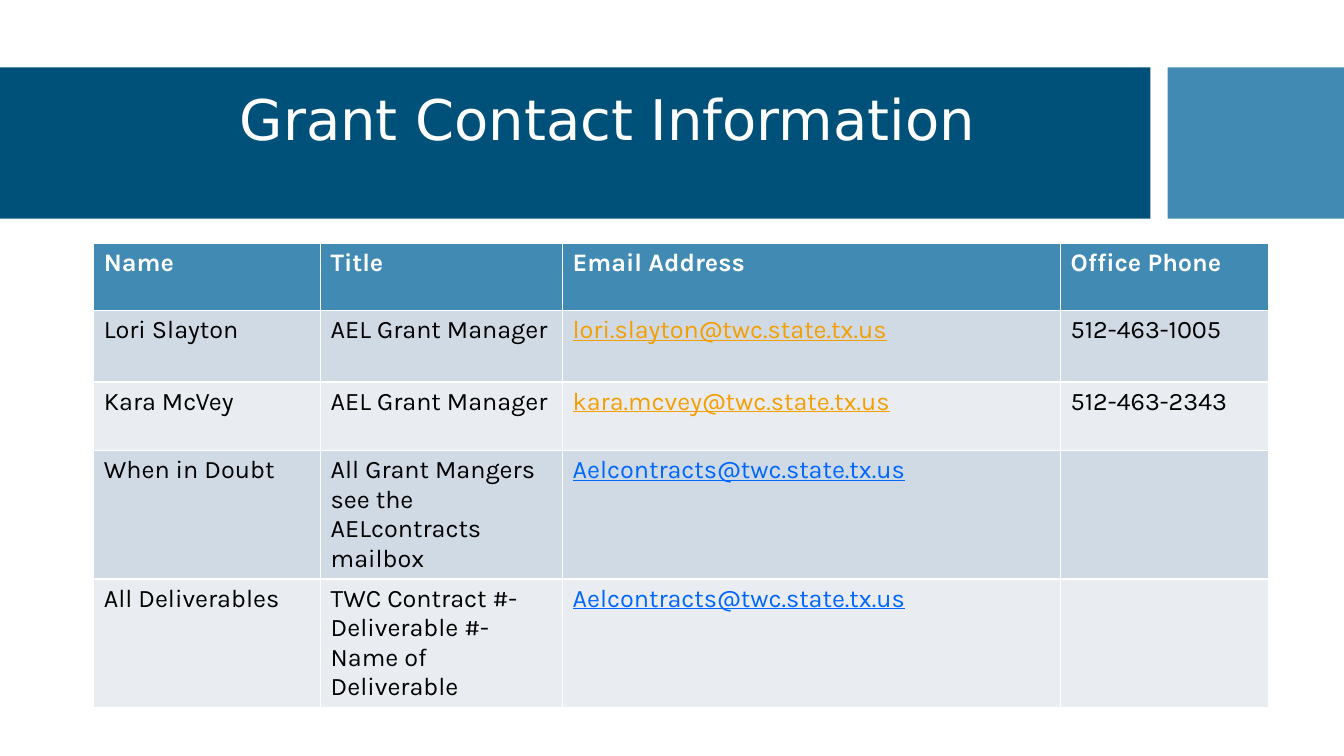
from dataclasses import dataclass

import pptx
import pptx.dml.color
import pptx.enum.shapes
import pptx.enum.text
import pptx.presentation
import pptx.shapes.base
import pptx.slide
import pptx.table
import pptx.util

RGBColor = pptx.dml.color.RGBColor
WHITE = RGBColor(0xFF, 0xFF, 0xFF)
BLACK = RGBColor(0x00, 0x00, 0x00)
NAVY = RGBColor(0x00, 0x51, 0x79)
STEEL = RGBColor(0x41, 0x8A, 0xB3)
BAND_DARK = RGBColor(0xCF, 0xDA, 0xE5)
BAND_LIGHT = RGBColor(0xE9, 0xED, 0xF2)
ORANGE = RGBColor(0xF5, 0x9E, 0x00)
BLUE = RGBColor(0x00, 0x66, 0xFF)

SLIDE_WIDTH = pptx.util.Inches(13.33)
SLIDE_HEIGHT = pptx.util.Inches(7.5)
EMAIL_COLUMN = 2


@dataclass(frozen=True)
class Region:
    """A rectangle in percent of the slide's width and height."""
    left: float
    top: float
    width: float
    height: float


@dataclass(frozen=True)
class Band:
    region: Region
    color: RGBColor


@dataclass(frozen=True)
class Contact:
    name: str
    title: str
    email: str
    phone: str
    email_color: RGBColor
    height: float


BANDS = (
    Band(Region(0, 8.93, 85.6, 20), NAVY),
    Band(Region(86.87, 8.93, 13.13, 20), STEEL),
)
TITLE_REGION = Region(6.98, 9.87, 76.44, 12.53)
TABLE_LEFT, TABLE_TOP = 6.98, 32.13
COLUMN_WIDTHS = (16.88, 18, 37.06, 15.45)
HEADER_HEIGHT = 8.93
HEADINGS = ("Name", "Title", "Email Address", "Office Phone")
CONTACTS = (
    Contact("Lori Slayton", "AEL Grant Manager", "lori.slayton@twc.state.tx.us",
            "512-463-1005", ORANGE, 9.47),
    Contact("Kara McVey", "AEL Grant Manager", "kara.mcvey@twc.state.tx.us",
            "512-463-2343", ORANGE, 9.07),
    Contact("When in Doubt", "All Grant Mangers see the AELcontracts mailbox",
            "Aelcontracts@twc.state.tx.us", "", BLUE, 16.93),
    Contact("All Deliverables", "TWC Contract #- Deliverable #- Name of Deliverable",
            "Aelcontracts@twc.state.tx.us", "", BLUE, 16.93),
)


def across(percent: float) -> int:
    return round(SLIDE_WIDTH * percent / 100)


def down(percent: float) -> int:
    return round(SLIDE_HEIGHT * percent / 100)


def add_band(slide: pptx.slide.Slide, band: Band) -> None:
    region = band.region
    shape = slide.shapes.add_shape(
        pptx.enum.shapes.MSO_SHAPE.RECTANGLE, across(region.left), down(region.top),
        across(region.width), down(region.height))
    shape.shadow.inherit = False
    shape.fill.solid()
    shape.fill.fore_color.rgb = band.color
    shape.line.fill.background()


def set_title(slide: pptx.slide.Slide, text: str) -> None:
    title = slide.shapes.title
    title.left, title.top = across(TITLE_REGION.left), down(TITLE_REGION.top)
    title.width, title.height = across(TITLE_REGION.width), down(TITLE_REGION.height)
    title.text_frame.text = text
    title.text_frame.vertical_anchor = pptx.enum.text.MSO_ANCHOR.MIDDLE
    paragraph = title.text_frame.paragraphs[0]
    paragraph.alignment = pptx.enum.text.PP_ALIGN.CENTER
    paragraph.line_spacing = 0.9
    paragraph.font.name = "DejaVu Sans"
    paragraph.font.size = pptx.util.Pt(40)
    paragraph.font.color.rgb = WHITE


def fill_cell(cell: pptx.table._Cell, text: str, background: RGBColor, color: RGBColor,
              bold: bool = False, underline: bool = False) -> None:
    cell.fill.solid()
    cell.fill.fore_color.rgb = background
    cell.text = text
    font = cell.text_frame.paragraphs[0].font
    font.name = "Karla"
    font.size = pptx.util.Pt(18)
    font.bold = bold
    font.underline = underline
    font.color.rgb = color


def add_contact_table(slide: pptx.slide.Slide) -> None:
    heights = (HEADER_HEIGHT, *(contact.height for contact in CONTACTS))
    table = slide.shapes.add_table(
        len(heights), len(COLUMN_WIDTHS), across(TABLE_LEFT), down(TABLE_TOP),
        across(sum(COLUMN_WIDTHS)), down(sum(heights))).table
    for column, width in zip(table.columns, COLUMN_WIDTHS):
        column.width = across(width)
    for row, height in zip(table.rows, heights):
        row.height = down(height)

    # Header row
    for column_index, heading in enumerate(HEADINGS):
        fill_cell(table.cell(0, column_index), heading, STEEL, WHITE, bold=True)

    # Contact rows in alternating bands
    for row_index, contact in enumerate(CONTACTS, start=1):
        background = BAND_DARK if row_index % 2 else BAND_LIGHT
        values = (contact.name, contact.title, contact.email, contact.phone)
        for column_index, value in enumerate(values):
            is_email = column_index == EMAIL_COLUMN
            fill_cell(table.cell(row_index, column_index), value, background,
                      contact.email_color if is_email else BLACK, underline=is_email)


def main() -> None:
    presentation = pptx.Presentation()
    presentation.slide_width = SLIDE_WIDTH
    presentation.slide_height = SLIDE_HEIGHT
    title_only = presentation.slide_layouts.get_by_name("Title Only")
    slide = presentation.slides.add_slide(title_only)

    # Bands go behind the title
    for band in BANDS:
        add_band(slide, band)
    title_element = slide.shapes.title.element
    title_element.getparent().append(title_element)

    set_title(slide, "Grant Contact Information")
    add_contact_table(slide)
    presentation.save("out.pptx")


if __name__ == "__main__":
    main()
